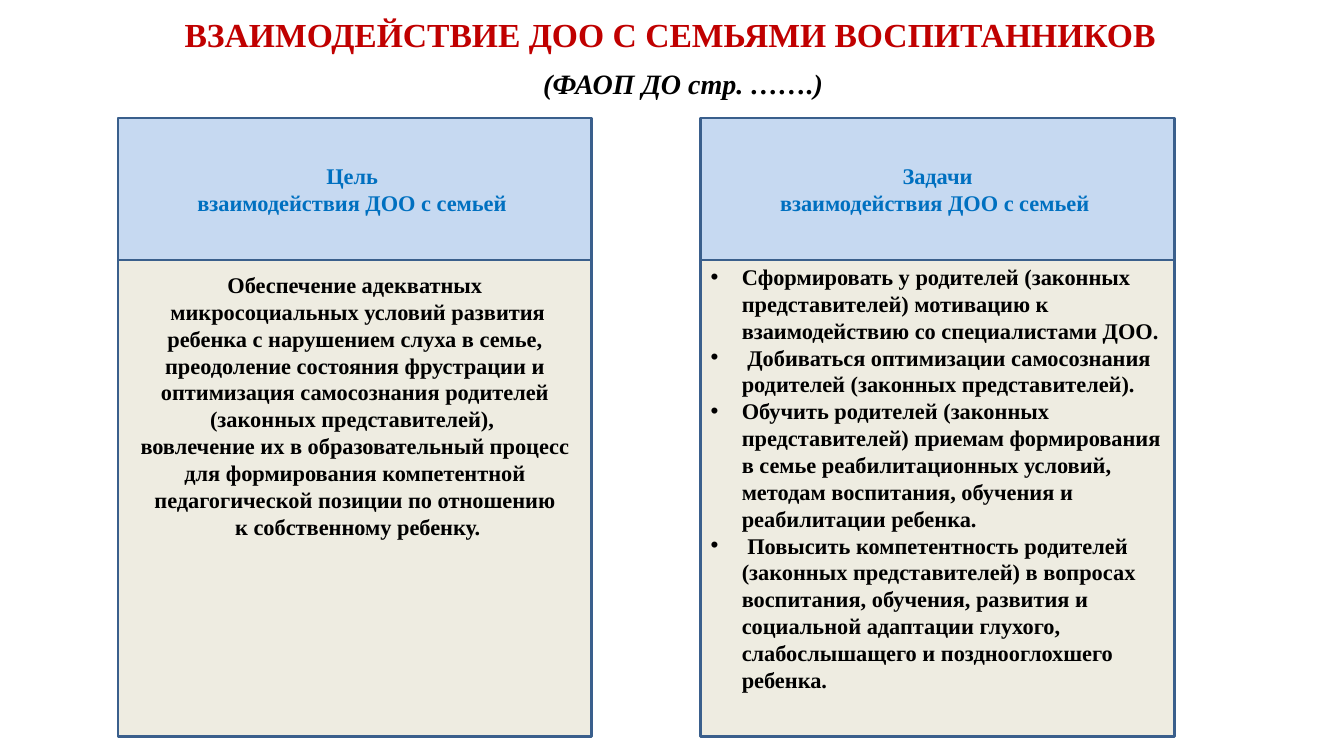
"""Build the slide on how a preschool works with its pupils' families."""
from dataclasses import dataclass

import pptx
import pptx.util
import pptx.dml.color
import pptx.enum.shapes
import pptx.enum.text
from lxml import etree

WIDTH, HEIGHT = 13.33, 7.5
COL, ROW = WIDTH / 100, HEIGHT / 100
COLORS = {"title": "C00000", "head_text": "0070C0", "head": "C6D9F1",
          "body": "EEECE1", "border": "3A5F8C", "text": "000000"}
FONT = {"name": "Times New Roman", "bold": True}
ALIGN = pptx.enum.text.PP_ALIGN
ANCHOR = pptx.enum.text.MSO_ANCHOR
PANEL_TOP, PANEL_COLS = 15.6, 35.25
HEAD_ROWS, BODY_ROWS = 18.8, 63.07
BULLET_INDENT = 0.31


@dataclass
class Panel:
    col: float
    head: list[str]
    body: list[str]
    inset: float
    bulleted: bool = False


PANELS = [
    Panel(8.78, ["Цель ", "взаимодействия ДОО с семьей "], [
        "Обеспечение адекватных",
        " микросоциальных условий развития ребенка с нарушением слуха в семье, "
        "преодоление состояния фрустрации и оптимизация самосознания родителей "
        "(законных представителей), ",
        "вовлечение их в образовательный процесс для формирования компетентной "
        "педагогической позиции по отношению",
        " к собственному ребенку."], 0.11),
    Panel(52.13, ["Задачи", "взаимодействия ДОО с семьей "], [
        "Сформировать у родителей (законных представителей) мотивацию к "
        "взаимодействию со специалистами ДОО.",
        " Добиваться оптимизации самосознания родителей (законных представителей).",
        "Обучить родителей (законных представителей) приемам формирования в семье "
        "реабилитационных условий, методам воспитания, обучения и реабилитации ребенка.",
        " Повысить компетентность родителей (законных представителей) в вопросах "
        "воспитания, обучения, развития и социальной адаптации глухого, "
        "слабослышащего и позднооглохшего ребенка."], 0.03, True),
]


def rgb(key: str) -> pptx.dml.color.RGBColor:
    return pptx.dml.color.RGBColor.from_string(COLORS[key])


def grid(col: float, row: float, cols: float, rows: float) -> list[int]:
    return [pptx.util.Inches(v) for v in (col * COL, row * ROW, cols * COL, rows * ROW)]


def write(tf, lines: list[str], color: str, size: int, align, **extra) -> None:
    for i, line in enumerate(lines):
        p = tf.paragraphs[0] if i == 0 else tf.add_paragraph()
        p.alignment = align
        r = p.add_run()
        r.text = line
        for key, value in {**FONT, "size": pptx.util.Pt(size), **extra}.items():
            setattr(r.font, key, value)
        r.font.color.rgb = rgb(color)


def add_bullets(tf) -> None:
    indent = pptx.util.Inches(BULLET_INDENT)
    for p in tf.paragraphs:
        props = p._p.get_or_add_pPr()
        props.set("marL", str(indent))
        props.set("indent", str(-indent))
        for tag, attr, value in (("buFont", "typeface", "Arial"), ("buChar", "char", "•")):
            etree.SubElement(props, pptx.oxml.ns.qn(f"a:{tag}")).set(attr, value)


def add_box(s, place: list[int], fill: str):
    sp = s.shapes.add_shape(pptx.enum.shapes.MSO_SHAPE.RECTANGLE, *place)
    sp.shadow.inherit = False
    sp.fill.solid()
    sp.fill.fore_color.rgb = rgb(fill)
    sp.line.color.rgb = rgb("border")
    sp.line.width = pptx.util.Pt(2)
    sp.text_frame.word_wrap = True
    return sp


def add_panel(s, panel: Panel) -> None:
    head = add_box(s, grid(panel.col, PANEL_TOP, PANEL_COLS, HEAD_ROWS), "head")
    head.text_frame.vertical_anchor = ANCHOR.MIDDLE
    write(head.text_frame, panel.head, "head_text", 16, ALIGN.CENTER)
    body = add_box(s, grid(panel.col, PANEL_TOP + HEAD_ROWS, PANEL_COLS, BODY_ROWS), "body")
    tf = body.text_frame
    tf.vertical_anchor = ANCHOR.TOP
    tf.margin_top = pptx.util.Inches(panel.inset)
    write(tf, panel.body, "text", 16, ALIGN.LEFT if panel.bulleted else ALIGN.CENTER)
    if panel.bulleted:
        add_bullets(tf)


def add_heading(sp, place: list[int], text: str, color: str, size: int, **extra) -> None:
    sp.left, sp.top, sp.width, sp.height = place
    tf = sp.text_frame
    tf.word_wrap = False
    tf.auto_size = pptx.enum.text.MSO_AUTO_SIZE.SHAPE_TO_FIT_TEXT
    tf.vertical_anchor = ANCHOR.TOP
    write(tf, [text], color, size, ALIGN.LEFT, **extra)


def main() -> None:
    prs = pptx.Presentation()
    prs.slide_width, prs.slide_height = pptx.util.Inches(WIDTH), pptx.util.Inches(HEIGHT)
    s = prs.slides.add_slide(prs.slide_layouts[5])
    add_heading(s.shapes.title, grid(12.98, 1.2, 74.42, 6.67),
                "ВЗАИМОДЕЙСТВИЕ ДОО С СЕМЬЯМИ ВОСПИТАННИКОВ", "title", 24)
    for panel in PANELS:
        add_panel(s, panel)
    place = grid(39.68, 8.13, 22.51, 5.87)
    add_heading(s.shapes.add_textbox(*place), place, "(ФАОП ДО стр. …….)", "text", 20, italic=True)
    prs.save("out.pptx")


if __name__ == "__main__":
    main()
